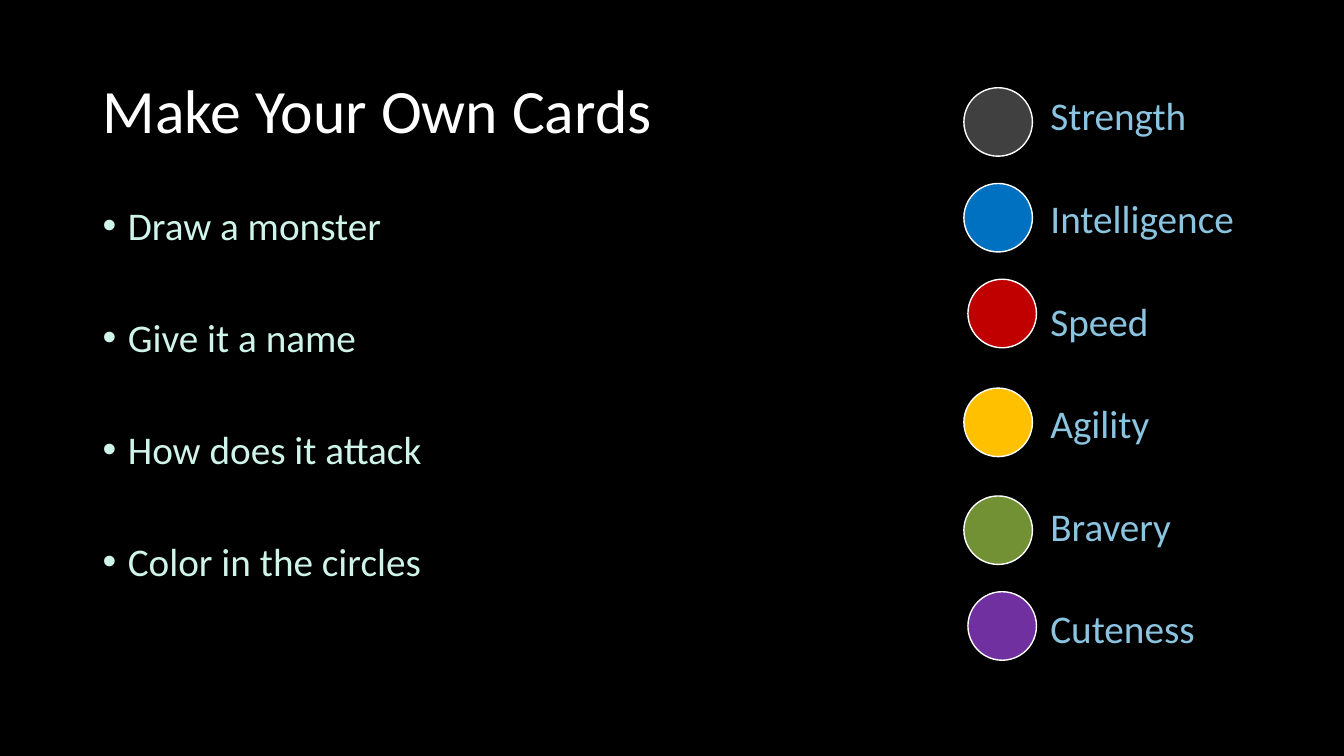
from lxml import etree
from pptx import Presentation
from pptx import util as u
from pptx.dml.color import RGBColor
from pptx.enum import shapes, text
from pptx.oxml import ns


def color(value):
    return RGBColor.from_string(value)


class CardSlide:
    font = "Calibri"
    background = "000000"
    outline = "FFFFFF"
    diameter = 0.68

    def __init__(self, deck):
        self.slide = deck.slides.add_slide(deck.slide_layouts[6])
        fill = self.slide.background.fill
        fill.solid()
        fill.fore_color.rgb = color(self.background)

    def text(self, left, top, width, height, lines, size, ink,
             spacing=0.9, gap=0, middle=False, bullets=False):
        box = self.slide.shapes.add_textbox(
            u.Inches(left), u.Inches(top), u.Inches(width), u.Inches(height))
        frame = box.text_frame
        frame.word_wrap = True
        frame.vertical_anchor = (
            text.MSO_ANCHOR.MIDDLE if middle else text.MSO_ANCHOR.TOP)
        frame.text = "\n".join(lines)
        for index, para in enumerate(frame.paragraphs):
            para.line_spacing = spacing
            para.space_before = u.Pt(gap if index else 10)
            if bullets:
                self.bullet(para)
            for span in para.runs:
                span.font.name = self.font
                span.font.size = u.Pt(size)
                span.font.color.rgb = color(ink)

    def bullet(self, para):
        properties = para._p.get_or_add_pPr()
        properties.set("marL", str(u.Inches(0.25)))
        properties.set("indent", str(u.Inches(-0.25)))
        font = etree.SubElement(properties, ns.qn("a:buFont"))
        font.set("typeface", "Arial")
        mark = etree.SubElement(properties, ns.qn("a:buChar"))
        mark.set("char", "•")

    def circle(self, left, top, fill):
        side = u.Inches(self.diameter)
        shape = self.slide.shapes.add_shape(
            shapes.MSO_SHAPE.OVAL, u.Inches(left), u.Inches(top), side, side)
        shape.shadow.inherit = False
        shape.fill.solid()
        shape.fill.fore_color.rgb = color(fill)
        shape.line.color.rgb = color(self.outline)
        shape.line.width = u.Pt(1)


STEPS = ["Draw a monster", "Give it a name", "How does it attack",
         "Color in the circles"]

# Trait name, circle left, circle top, circle colour
TRAITS = [
    ("Strength", 9.56, 0.87, "404040"),
    ("Intelligence", 9.56, 1.82, "0070C0"),
    ("Speed", 9.6, 2.77, "C00000"),
    ("Agility", 9.56, 3.85, "FFC000"),
    ("Bravery", 9.56, 4.92, "729134"),
    ("Cuteness", 9.6, 5.87, "7030A0"),
]


def main():
    deck = Presentation()
    deck.slide_width = u.Inches(13.33)
    deck.slide_height = u.Inches(7.5)
    card = CardSlide(deck)

    # Title and steps
    card.text(0.92, 0.4, 11.5, 1.45, ["Make Your Own Cards"], 44, "FFFFFF",
              middle=True)
    card.text(0.92, 2, 8.5, 4.76, STEPS, 28, "CFF4EA", gap=49.7, bullets=True)

    # Traits with their circles
    names = [name for name, *_ in TRAITS]
    card.text(10.32, 0.95, 2.9, 5.81, names, 28, "8BC4E0", spacing=0.8,
              gap=46.4)
    for _, left, top, fill in TRAITS:
        card.circle(left, top, fill)

    deck.save("out.pptx")


if __name__ == "__main__":
    main()
